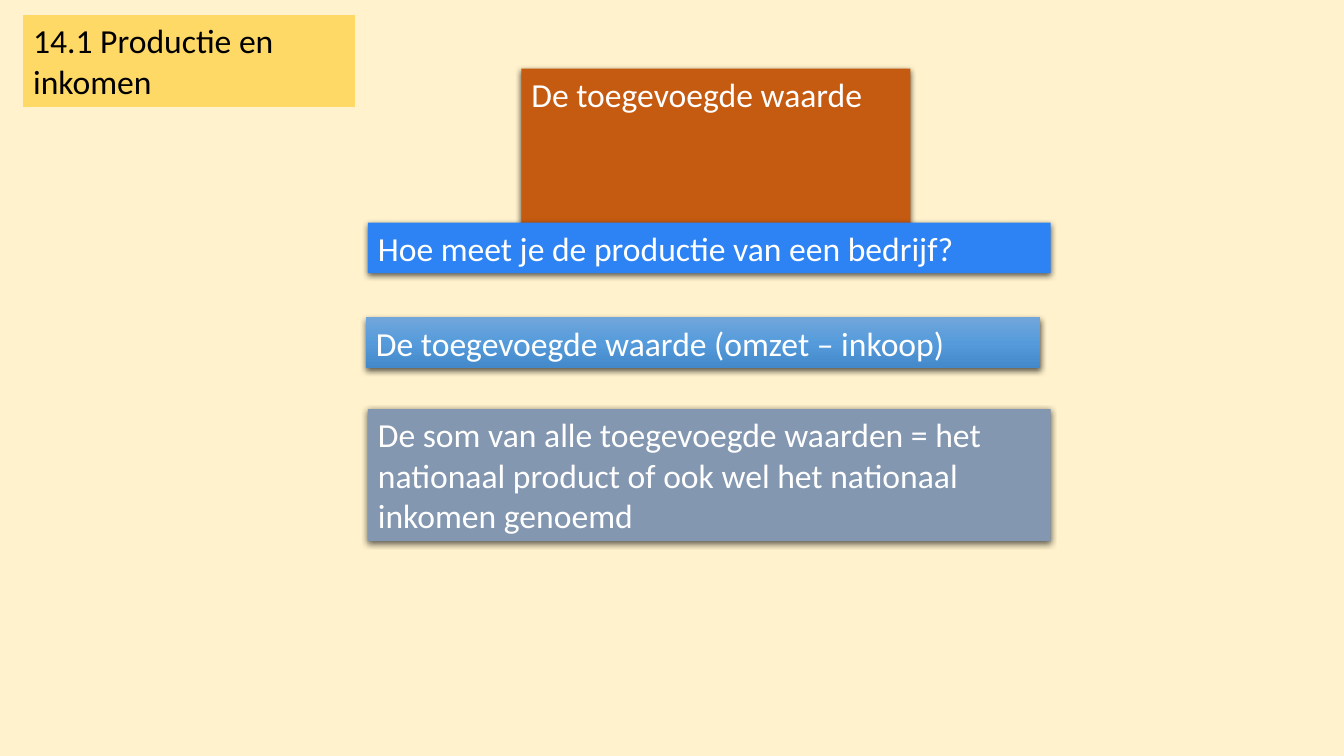
from copy import deepcopy
from dataclasses import dataclass

from lxml import etree
from pptx import Presentation
from pptx import util as u
from pptx.dml.color import RGBColor
from pptx.enum import shapes, text
from pptx.oxml.ns import qn


@dataclass(frozen=True)
class Theme:
    font: str = "Calibri"
    size: int = 24
    background: str = "FFF2CC"
    light: str = "FFFFFF"
    dark: str = "000000"
    shadow: str = "000000"
    chapter: str = "FFD966"
    title: str = "C55A11"
    question: str = "2D83F4"
    answer: tuple = ((0, "71A6DB"), (0.5, "559BDB"), (1, "448ACA"))
    conclusion: str = "8497B0"


def write_text(shape, content, font, size, color):
    frame = shape.text_frame
    frame.word_wrap = True
    frame.auto_size = text.MSO_AUTO_SIZE.SHAPE_TO_FIT_TEXT
    frame.vertical_anchor = text.MSO_ANCHOR.TOP
    paragraph = frame.paragraphs[0]
    paragraph.alignment = text.PP_ALIGN.LEFT
    run = paragraph.add_run()
    run.text = content
    run.font.name = font
    run.font.size = u.Pt(size)
    run.font.color.rgb = RGBColor.from_string(color)


class SlideBuilder:
    def __init__(self, presentation, theme):
        self.theme = theme
        self.slide = presentation.slides.add_slide(presentation.slide_layouts[5])
        self.paint(self.slide.background.fill, theme.background)

    def paint(self, fill, color):
        fill.solid()
        fill.fore_color.rgb = RGBColor.from_string(color)

    def paint_gradient(self, shape, stops):
        fill = shape.fill
        fill.gradient()
        fill.gradient_angle = 270
        stop_list = shape._element.spPr.find(qn("a:gradFill")).find(qn("a:gsLst"))
        while len(stop_list) < len(stops):
            stop_list.append(deepcopy(stop_list[0]))
        for stop, (position, color) in zip(fill.gradient_stops, stops):
            stop.position = position
            stop.color.rgb = RGBColor.from_string(color)

    def add_shadow(self, shape):
        effects = shape._element.spPr.find(qn("a:effectLst"))
        shadow = etree.SubElement(
            effects, qn("a:outerShdw"), blurRad=str(u.Pt(4.5)), dist=str(u.Pt(1.5)),
            dir="5400000", algn="ctr", rotWithShape="0")
        color = etree.SubElement(shadow, qn("a:srgbClr"), val=self.theme.shadow)
        etree.SubElement(color, qn("a:alpha"), val="63000")

    def format_box(self, shape, content, bounds, fill, color, shadow):
        shape.left, shape.top, shape.width, shape.height = map(u.Inches, bounds)
        if isinstance(fill, tuple):
            self.paint_gradient(shape, fill)
        else:
            self.paint(shape.fill, fill)
        shape.line.fill.background()
        if shadow:
            self.add_shadow(shape)
        write_text(shape, content, font=self.theme.font, size=self.theme.size, color=color)

    def title(self, content, bounds, fill):
        shape = self.slide.shapes.title
        etree.SubElement(shape._element.spPr, qn("a:effectLst"))
        self.format_box(shape, content, bounds, fill, self.theme.light, True)

    def box(self, content, bounds, fill, color=None, shadow=True):
        shape = self.slide.shapes.add_shape(
            shapes.MSO_SHAPE.RECTANGLE, *map(u.Inches, bounds))
        shape.shadow.inherit = False
        self.format_box(shape, content, bounds, fill, color or self.theme.light, shadow)


def main():
    presentation = Presentation()
    presentation.slide_width = u.Inches(13.33)
    presentation.slide_height = u.Inches(7.5)
    theme = Theme()
    builder = SlideBuilder(presentation, theme)
    builder.title("De toegevoegde waarde", (5.17, 0.68, 3.86, 0.5), theme.title)
    builder.box("Hoe meet je de productie van een bedrijf?",
                (3.65, 2.21, 6.77, 0.5), theme.question)
    builder.box("De toegevoegde waarde (omzet – inkoop)",
                (3.63, 3.15, 6.69, 0.5), theme.answer)
    builder.box("De som van alle toegevoegde waarden = het nationaal product "
                "of ook wel het nationaal inkomen genoemd",
                (3.65, 4.06, 6.77, 1.31), theme.conclusion)
    builder.box("14.1 Productie en inkomen", (0.23, 0.15, 3.29, 0.91),
                theme.chapter, color=theme.dark, shadow=False)
    presentation.save("out.pptx")


if __name__ == "__main__":
    main()
